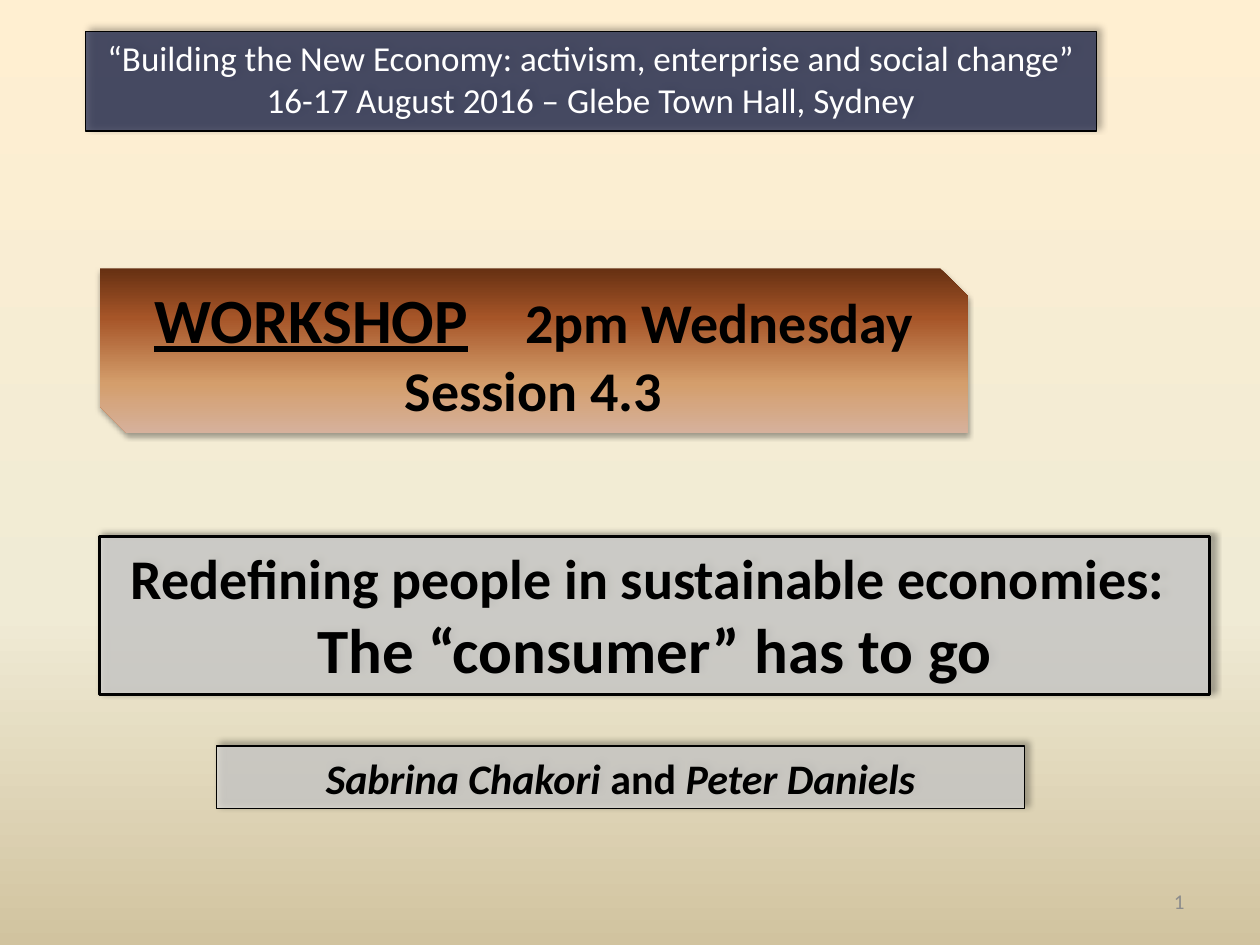
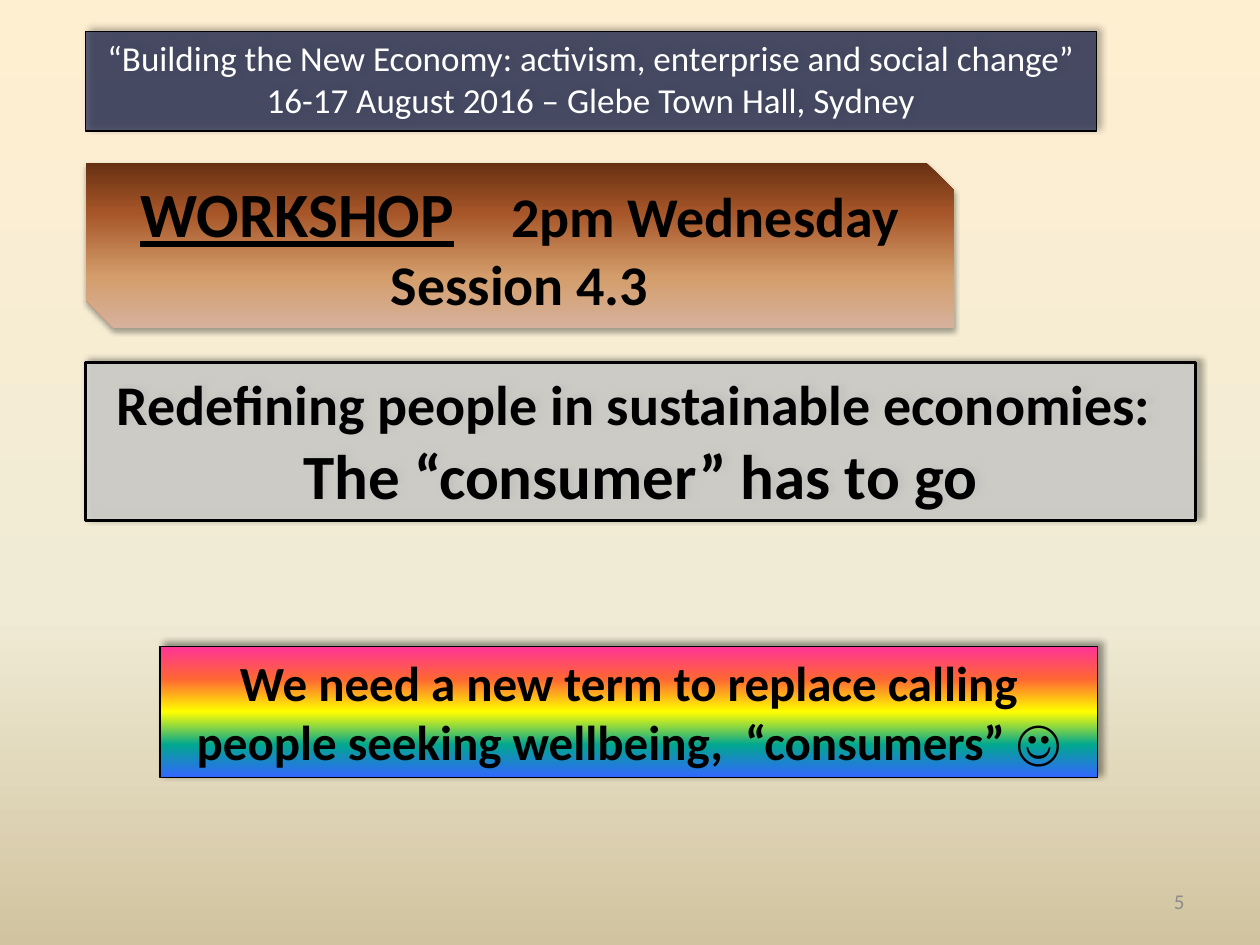
from lxml.etree import SubElement
from pptx import Presentation
from pptx.dml.color import RGBColor
from pptx.enum.shapes import MSO_SHAPE
from pptx.enum.text import MSO_ANCHOR, MSO_AUTO_SIZE, PP_ALIGN
from pptx.oxml.ns import qn
from pptx.util import Inches, Pt


class Theme:
    font = "Calibri"
    black, white, number = "000000", "FFFFFF", "8C8C8C"
    navy, grey = "18224C", "D9D9D9"
    opacity = 71
    # Gradients run from top to bottom as (percent, colour)
    parchment = [(0, "FFEFD1"), (65, "F0EBD5"), (100, "D1C39F")]
    copper = [(0, "663012"), (30, "A65528"), (70, "D49E6C"), (100, "D6B19C")]
    rainbow = [(0, "FF3399"), (25, "FF6633"), (50, "FFFF00"),
               (75, "01A78F"), (100, "3366FF")]
    # Sizes in points
    headline, subhead, question, author, event, page = 36, 32, 28, 24, 20, 12
    thin, thick = 0.75, 1.75
    # Shadows: opacity percent, blur, distance, direction
    box_shadow = (40, 4, 3, 315)
    banner_shadow = (35, 3.1, 1.8, 90)


# Content: each paragraph is a list of (text, size, styles) runs;
# a number among the styles is letter spacing in points
EVENT = [
    [("“Building the New Economy: activism, enterprise and social change”", Theme.event, ())],
    [("16-17 August 2016 – Glebe Town Hall, Sydney", Theme.event, ())],
]
WORKSHOP = [[
    ("WORKSHOP", Theme.headline, ("bold", "underline")),
    (" ", Theme.headline, ("bold", 24.4)),
    ("2pm Wednesday Session 4.3", Theme.subhead, ("bold",)),
]]
TOPIC = [
    [("Redefining people in sustainable economies: ", Theme.subhead, ("bold",))],
    [("The “consumer” has to go", Theme.headline, ("bold",))],
]
AUTHORS = [[
    ("Sabrina Chakori ", Theme.author, ("bold", "italic")),
    ("and", Theme.author, ("bold",)),
    (" Peter Daniels", Theme.author, ("bold", "italic")),
]]
QUESTION = [[
    ("We need a new term to replace calling people seeking wellbeing,  “consumers” ☺",
     Theme.question, ("bold",)),
]]

SLIDES = [
    {"number": "1", "left": 0.79, "workshop_top": 2.13, "topic_top": 4.26,
     "closing": AUTHORS, "closing_box": (1.72, 5.92, 6.41, 0.5), "closing_fill": Theme.grey},
    {"number": "5", "left": 0.68, "workshop_top": 1.29, "topic_top": 2.88,
     "closing": QUESTION, "closing_box": (1.27, 5.13, 7.44, 1.04), "closing_fill": Theme.rainbow},
]


# Formatting helpers
def paint_gradient(fill, owner, stops):
    fill.gradient()
    fill.gradient_angle = 270
    stop_list = next(owner.iter(qn("a:gsLst")))
    for old_stop in list(stop_list):
        stop_list.remove(old_stop)
    for percent, colour in stops:
        stop = SubElement(stop_list, qn("a:gs"), pos=str(percent * 1000))
        SubElement(stop, qn("a:srgbClr"), val=colour)


def paint_translucent(shape, colour):
    shape.fill.solid()
    shape.fill.fore_color.rgb = RGBColor.from_string(colour)
    colour_element = next(shape.element.spPr.iter(qn("a:srgbClr")))
    SubElement(colour_element, qn("a:alpha"), val=str(Theme.opacity * 1000))


def cast_shadow(shape, settings):
    opacity, blur, distance, direction = settings
    shape.shadow.inherit = False
    effects = shape.element.spPr.find(qn("a:effectLst"))
    shadow = SubElement(effects, qn("a:outerShdw"), blurRad=str(Pt(blur)),
                        dist=str(Pt(distance)), dir=str(direction * 60000),
                        algn="tl", rotWithShape="0")
    colour = SubElement(shadow, qn("a:srgbClr"), val=Theme.black)
    SubElement(colour, qn("a:alpha"), val=str(opacity * 1000))


def place(shape, box):
    shape.left, shape.top, shape.width, shape.height = map(Inches, box)


def write(shape, paragraphs, colour=Theme.black, align=PP_ALIGN.CENTER,
          anchor=MSO_ANCHOR.TOP, top=0.05, bottom=0.05):
    frame = shape.text_frame
    frame.word_wrap = True
    frame.vertical_anchor = anchor
    frame.margin_left = frame.margin_right = Inches(0.1)
    frame.margin_top, frame.margin_bottom = Inches(top), Inches(bottom)
    for index, runs in enumerate(paragraphs):
        paragraph = frame.add_paragraph() if index else frame.paragraphs[0]
        paragraph.alignment = align
        for text, size, styles in runs:
            run = paragraph.add_run()
            run.text = text
            run.font.name = Theme.font
            run.font.size = Pt(size)
            run.font.color.rgb = RGBColor.from_string(colour)
            for style in styles:
                if isinstance(style, str):
                    setattr(run.font, style, True)
                else:
                    run.font._element.set("spc", str(round(style * 100)))


def style_box(shape, fill, line_width=Theme.thin):
    if isinstance(fill, str):
        paint_translucent(shape, fill)
    else:
        paint_gradient(shape.fill, shape.element, fill)
    shape.line.color.rgb = RGBColor.from_string(Theme.black)
    shape.line.width = Pt(line_width)
    cast_shadow(shape, Theme.box_shadow)
    shape.text_frame.auto_size = MSO_AUTO_SIZE.SHAPE_TO_FIT_TEXT


# Slide parts
def add_box(slide, box, fill, paragraphs, **text_options):
    shape = slide.shapes.add_shape(MSO_SHAPE.RECTANGLE, *map(Inches, box))
    style_box(shape, fill)
    write(shape, paragraphs, **text_options)


def add_workshop_banner(slide, left, top):
    banner = slide.shapes.add_shape(MSO_SHAPE.SNIP_2_DIAG_RECTANGLE,
                                    *map(Inches, (left, top, 6.89, 1.31)))
    paint_gradient(banner.fill, banner.element, Theme.copper)
    banner.line.fill.background()
    cast_shadow(banner, Theme.banner_shadow)
    write(banner, WORKSHOP, anchor=MSO_ANCHOR.MIDDLE, top=0.4, bottom=0.39)


def add_topic_title(slide, left, top):
    title = slide.shapes.title
    place(title, (left, top, 8.81, 1.25))
    style_box(title, Theme.grey, Theme.thick)
    write(title, TOPIC)


def add_page_number(slide, number):
    text_box = slide.shapes.add_textbox(*map(Inches, (7.17, 6.95, 2.33, 0.4)))
    write(text_box, [[(number, Theme.page, ())]], colour=Theme.number,
          align=PP_ALIGN.RIGHT, anchor=MSO_ANCHOR.MIDDLE)


def main():
    presentation = Presentation()
    presentation.slide_width, presentation.slide_height = Inches(10), Inches(7.5)
    master = presentation.slide_master
    paint_gradient(master.background.fill, master.element, Theme.parchment)
    title_only = presentation.slide_layouts.get_by_name("Title Only")

    for content in SLIDES:
        slide = presentation.slides.add_slide(title_only)
        add_box(slide, (0.68, 0.25, 8.02, 0.79), Theme.navy, EVENT,
                colour=Theme.white, top=0.04, bottom=0.08)
        add_workshop_banner(slide, content["left"], content["workshop_top"])
        add_topic_title(slide, content["left"], content["topic_top"])
        add_page_number(slide, content["number"])
        add_box(slide, content["closing_box"], content["closing_fill"], content["closing"])

    presentation.save("out.pptx")


if __name__ == "__main__":
    main()
